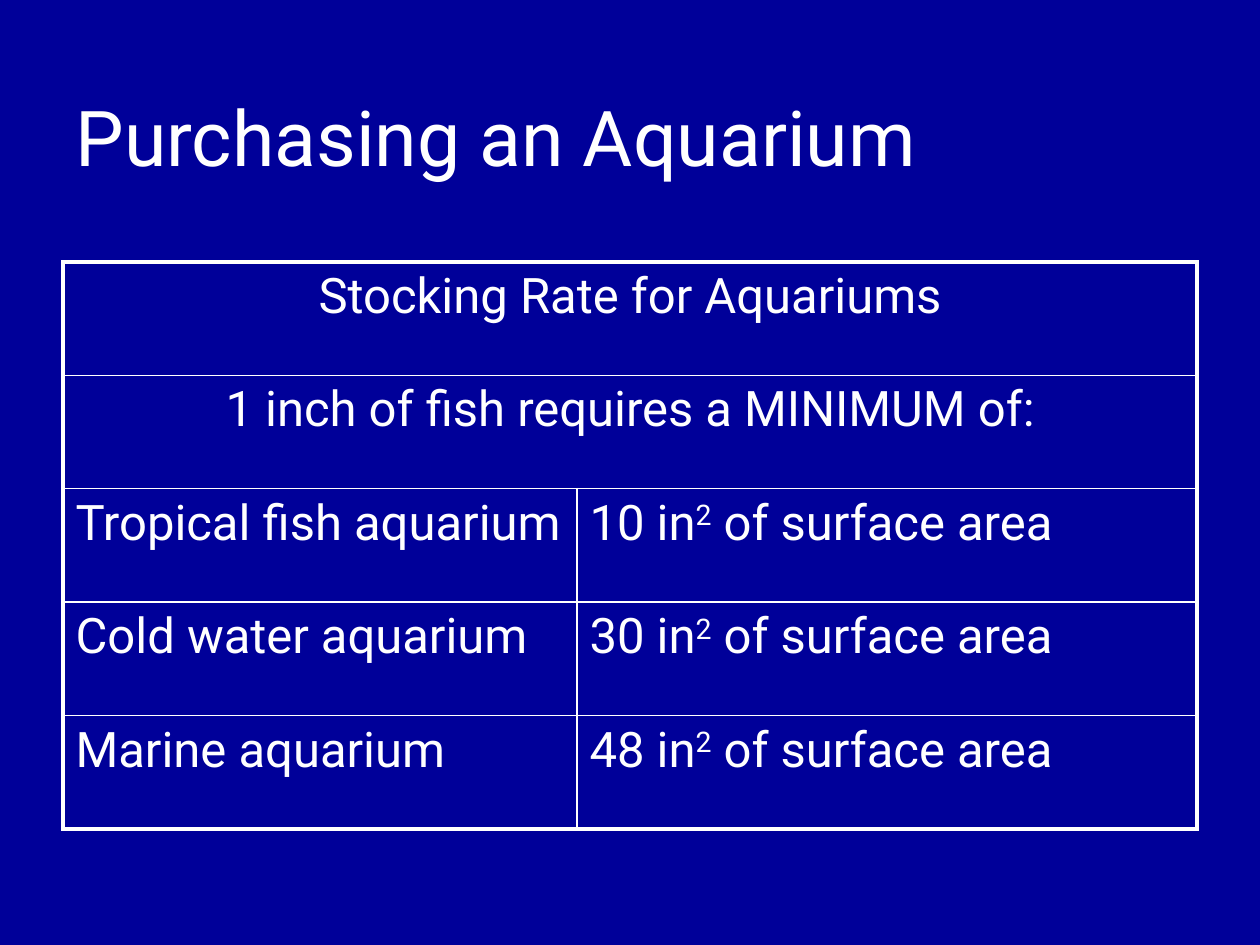
import pptx
import pptx.util
import pptx.dml.color
import pptx.enum.text
import pptx.oxml
import pptx.oxml.ns

Cm, Pt = pptx.util.Cm, pptx.util.Pt
Align = pptx.enum.text.PP_ALIGN
Anchor = pptx.enum.text.MSO_ANCHOR
COLORS = {"back": "000099", "text": "FFFFFF", "line": "FFFFFF"}
FONT = "Roboto"


def style(font, size):
    look = {"name": FONT, "size": Pt(size), "bold": False}
    for key, value in look.items():
        setattr(font, key, value)
    font.color.rgb = pptx.dml.color.RGBColor.from_string(COLORS["text"])


def border(cell, side, width):
    """Draw one solid edge of a cell; side is L, R, T or B."""
    edge = pptx.oxml.parse_xml(
        f'<a:ln{side} {pptx.oxml.ns.nsdecls("a")} w="{Pt(width)}">'
        f'<a:solidFill><a:srgbClr val="{COLORS["line"]}"/></a:solidFill>'
        f'</a:ln{side}>'
    )
    cell._tc.get_or_add_tcPr().append(edge)


deck = pptx.Presentation()
deck.slide_width, deck.slide_height = Cm(25.4), Cm(19.05)
slide = deck.slides.add_slide(deck.slide_layouts[5])
back = slide.background.fill
back.solid()
back.fore_color.rgb = pptx.dml.color.RGBColor.from_string(COLORS["back"])

# Title
title = slide.shapes.title
place = {"left": Cm(1.27), "top": Cm(0.81), "width": Cm(22.86), "height": Cm(3.84)}
for key, value in place.items():
    setattr(title, key, value)
frame = title.text_frame
frame.text = "Purchasing an Aquarium"
frame.auto_size = pptx.enum.text.MSO_AUTO_SIZE.NONE
frame.vertical_anchor = Anchor.MIDDLE
frame.paragraphs[0].alignment = Align.LEFT
style(frame.paragraphs[0].runs[0].font, 44)

# Stocking table: two full-width headings, then one row per aquarium
heads = ["Stocking Rate for Aquariums", "1 inch of fish requires a MINIMUM of:"]
rates = [("Tropical fish aquarium", 10), ("Cold water aquarium", 30), ("Marine aquarium", 48)]
rows = [[[head], []] for head in heads]
rows += [[[name], [f"{area} in", "2", " of surface area"]] for name, area in rates]
last = len(rows) - 1

table = slide.shapes.add_table(
    len(rows), 2, Cm(1.27), Cm(5.28), Cm(22.86), Cm(11.43)
).table
table.first_row = table.horz_banding = False
for col, width in zip(table.columns, (10.36, 12.5)):
    col.width = Cm(width)

for i, row in enumerate(rows):
    for j, parts in enumerate(row):
        cell = table.cell(i, j)
        head = i < len(heads)
        outer = {"L": j == 0 or head, "R": j == 1 or head, "T": i == 0, "B": i == last}
        for side, thick in outer.items():
            border(cell, side, 2.25 if thick else 1)
        cell.fill.background()
        cell.vertical_anchor = Anchor.TOP
        para = cell.text_frame.paragraphs[0]
        para.alignment = Align.CENTER if head else Align.LEFT
        for part in parts:
            run = para.add_run()
            run.text = part
            style(run.font, 28)
            if part == "2":
                run._r.get_or_add_rPr().set("baseline", "30000")

for i in range(len(heads)):
    table.cell(i, 0).merge(table.cell(i, 1))

deck.save("out.pptx")
